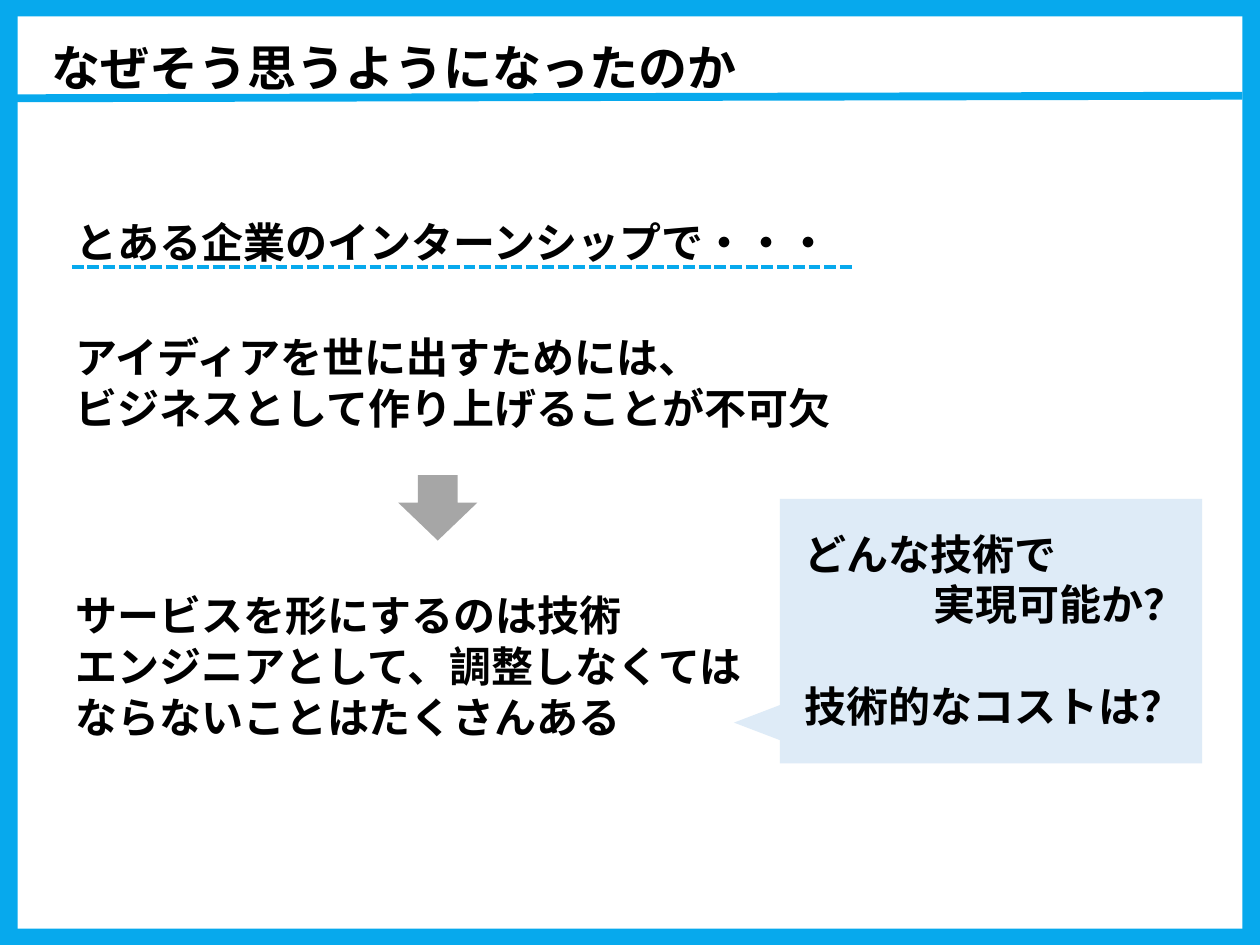
from pptx import Presentation
from pptx.dml.color import RGBColor
from pptx.enum import dml, shapes, text
from pptx.oxml.ns import qn
from pptx.util import Inches, Pt
from lxml import etree

# Content
FONT = "Noto Sans CJK JP"
BLUE, PALE, GREY, WHITE = "07A9ED", "DEEBF7", "A6A6A6", "FFFFFF"
TITLE = "なぜそう思うようになったのか"
NOTES = [  # box, lines
    ((0.5, 1.67, 8.99, 0.5), ["とある企業のインターンシップで・・・"]),
    ((0.5, 2.58, 6.58, 0.91), ["アイディアを世に出すためには、",
                               "ビジネスとして作り上げることが不可欠"]),
    ((0.5, 4.63, 5.69, 1.31), ["サービスを形にするのは技術",
                               "エンジニアとして、調整しなくては",
                               "ならないことはたくさんある"]),
]
ASKS = ["どんな技術で", "実現可能か？", "技術的なコストは？"]
WIDE, HIGH, BAR_H, BAR_W = 10, 7.5, 0.13, 0.14
FRAME = [(0, 0, WIDE, BAR_H), (0, HIGH - BAR_H, WIDE, BAR_H),
         (0, 0, BAR_W, HIGH), (WIDE - BAR_W, 0, BAR_W, HIGH)]
KIND = shapes.MSO_SHAPE


def color(code):
    return RGBColor.from_string(code)


def write(box, lines, size):
    frame = box.text_frame
    frame.word_wrap = True
    frame.auto_size = text.MSO_AUTO_SIZE.NONE
    frame.vertical_anchor = text.MSO_ANCHOR.TOP
    frame.text = "\n".join(lines)
    for para in frame.paragraphs:
        para.alignment = text.PP_ALIGN.LEFT
        para.line_spacing = Pt(round(size * 1.2))
        para.space_before = Pt(0)
        font = para.font
        font.name, font.size, font.bold = FONT, Pt(size), True
        font.color.rgb = color("000000")
        for run in para.runs:  # East Asian typeface
            props = run._r.get_or_add_rPr()
            etree.SubElement(props, qn("a:ea")).set("typeface", FONT)
    return frame.paragraphs


def block(home, kind, at, fill):
    shape = home.add_shape(kind, *map(Inches, at))
    shape.shadow.inherit = False
    shape.fill.solid()
    shape.fill.fore_color.rgb = color(fill)
    shape.line.fill.background()
    return shape


def rule(home, ends, width):
    line = home.add_connector(shapes.MSO_CONNECTOR.STRAIGHT, *map(Inches, ends))
    line.line.color.rgb = color(BLUE)
    line.line.width = Pt(width)
    etree.SubElement(line._element.spPr, qn("a:effectLst"))
    return line


def main():
    deck = Presentation()
    deck.slide_width, deck.slide_height = Inches(WIDE), Inches(HIGH)
    slide = deck.slides.add_slide(deck.slide_layouts[5])
    items = slide.shapes

    # Title
    head = items.title
    head.left, head.top, head.width, head.height = map(
        Inches, (0.31, 0.24, 8.71, 0.57))
    write(head, [TITLE], 28)

    # Main statements
    for at, lines in NOTES:
        box = items.add_textbox(*map(Inches, at))
        box.fill.solid()
        box.fill.fore_color.rgb = color(WHITE)
        write(box, lines, 24)
    dash = rule(items, (0.57, 2.12, 6.79, 2.12), 2.25)
    dash.line.dash_style = dml.MSO_LINE.SQUARE_DOT
    arrow = block(items, KIND.DOWN_ARROW, (3.16, 3.77, 0.63, 0.52), GREY)
    arrow.adjustments[1] = 0.58

    # Callout with questions
    block(items, KIND.RECTANGLE, (6.19, 3.96, 3.35, 2.1), PALE)
    tip = block(items, KIND.ISOSCELES_TRIANGLE, (5.89, 5.46, 0.42, 0.55), PALE)
    tip.rotation = 270
    asks = write(items.add_textbox(*map(Inches, (6.29, 4.14, 3.22, 1.72))),
                 ASKS, 24)
    asks[1].alignment = text.PP_ALIGN.RIGHT
    asks[2].space_before = Pt(29)

    # Title rule and slide frame
    rule(items, (0.07, 0.78, 9.86, 0.76), 4.5)
    frame = items.add_group_shape()
    for at in FRAME:
        block(frame.shapes, KIND.RECTANGLE, at, BLUE)

    deck.save("out.pptx")


if __name__ == "__main__":
    main()
